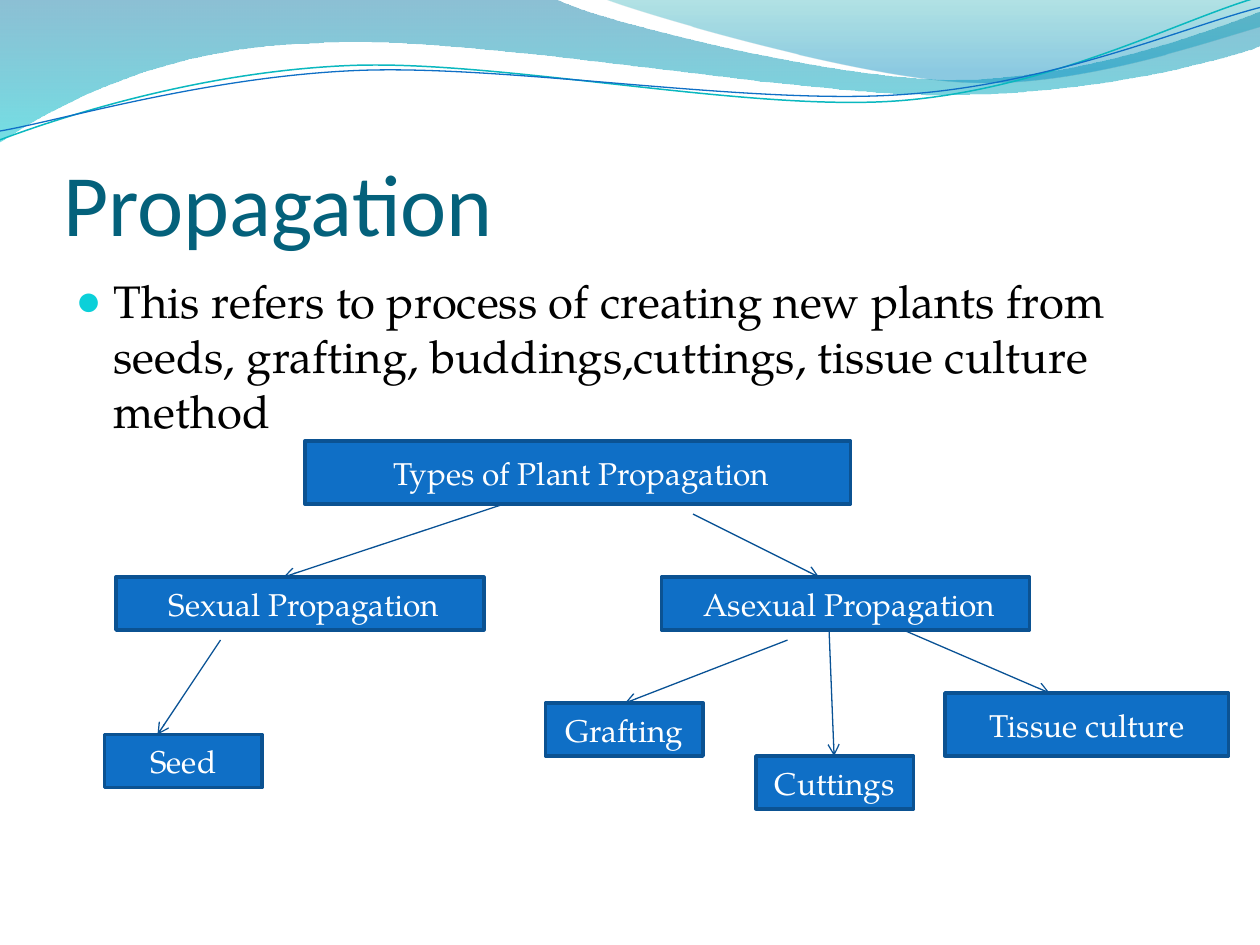
from math import cos, radians, sin

from lxml import etree
from pptx import Presentation
from pptx.dml.color import RGBColor
from pptx.enum.shapes import MSO_CONNECTOR, MSO_SHAPE
from pptx.enum.text import MSO_ANCHOR, MSO_AUTO_SIZE, PP_ALIGN
from pptx.oxml.ns import qn
from pptx.util import Inches, Pt

RECTANGLE = MSO_SHAPE.RECTANGLE
STRAIGHT = MSO_CONNECTOR.STRAIGHT
NO_AUTOFIT = MSO_AUTO_SIZE.NONE
LEFT, CENTER = PP_ALIGN.LEFT, PP_ALIGN.CENTER
TOP, MIDDLE, BOTTOM = MSO_ANCHOR.TOP, MSO_ANCHOR.MIDDLE, MSO_ANCHOR.BOTTOM
TITLE_FONT, BODY_FONT = "Calibri", "TeX Gyre Pagella"
TILT = 2.7
COLORS = {
    "title": "04617B", "text": "000000", "bullet": "0BD0D9",
    "box": "0F6FC6", "box_line": "0B5292", "box_text": "FFFFFF", "arrow": "095295",
    "wave_top": "0074A1", "wave_bottom": "00C6CF",
    "crest_top": "00A1A9", "crest_bottom": "008BBF",
    "teal_line": "0AB8BF", "blue_line": "0F6FC6",
}

WAVE = [(0, 0), (4.4, -0.01), (4.76, 0.17, 6.64, 0.63, 7.58, 0.63),
        (8.53, 0.63, 9.58, 0.26, 10, 0.09), (10.01, 0.36),
        (9.83, 0.44, 8.7, 0.76, 7.46, 0.75), (6.22, 0.75, 3.82, 0.28, 2.57, 0.34),
        (1.29, 0.36, 0.46, 0.83, -0.01, 1.13), (0, 0)]
CREST = [(4.79, -0.01), (5.09, 0.11, 6.82, 0.62, 7.69, 0.65),
         (8.56, 0.69, 9.61, 0.32, 10, 0.21), (10, 0), (4.79, -0.01)]
TEAL_CURVE = [(0, 1.11), (0.48, 0.93, 1.58, 0.57, 2.77, 0.52),
              (3.95, 0.47, 5.93, 0.89, 7.13, 0.8), (8.33, 0.71, 9.38, 0.15, 9.98, -0.02)]
BLUE_CURVE = [(0, 1.04), (0.47, 0.96, 1.64, 0.61, 2.83, 0.56),
              (4.03, 0.51, 5.97, 0.84, 7.17, 0.75), (8.36, 0.67, 9.41, 0.21, 10, 0.06)]
BOXES = [
    (" Types of Plant Propagation", 2.42, 3.5, 4.33, 0.5),
    (" Sexual Propagation", 0.92, 4.58, 2.92, 0.42),
    (" Asexual Propagation", 5.25, 4.58, 2.92, 0.42),
    ("Seed", 0.83, 5.83, 1.25, 0.42),
    ("Grafting", 4.33, 5.58, 1.25, 0.42),
    ("Cuttings", 6, 6, 1.25, 0.42),
    ("Tissue culture", 7.5, 5.5, 2.25, 0.5),
]
ARROWS = [
    (4, 4, 2.25, 4.58), (5.5, 4.08, 6.5, 4.58), (1.75, 5.08, 1.25, 5.83),
    (6.25, 5.08, 4.96, 5.58), (6.58, 5, 6.62, 6), (7.17, 5, 8.33, 5.5),
]


def color(name):
    return RGBColor.from_string(COLORS[name])


def turn(segment, center, degrees):
    angle = radians(degrees)
    turned = []
    for x, y in zip(segment[::2], segment[1::2]):
        x, y = x - center[0], y - center[1]
        turned += [center[0] + x * cos(angle) - y * sin(angle),
                   center[1] + x * sin(angle) + y * cos(angle)]
    return turned


class SlideBuilder:
    def __init__(self, slide):
        self.slide = slide
        self.master = slide.slide_layout.slide_master
        self.foreground = self.master.placeholders[0]._element

    def style_text(self, paragraph, font, size, color_name, alignment):
        paragraph.alignment = alignment
        paragraph.font.name = font
        paragraph.font.size = Pt(size)
        paragraph.font.color.rgb = color(color_name)

    def place(self, shape, left, top, width, height, anchor):
        shape.left, shape.top = Inches(left), Inches(top)
        shape.width, shape.height = Inches(width), Inches(height)
        shape.text_frame.vertical_anchor = anchor

    def title(self, text):
        shape = self.slide.shapes.title
        self.place(shape, 0.5, 0.77, 9, 1.25, BOTTOM)
        frame = shape.text_frame
        frame.margin_left = frame.margin_right = frame.margin_bottom = 0
        frame.text = text
        self.style_text(frame.paragraphs[0], TITLE_FONT, 50, "title", LEFT)

    def bullet(self, text):
        shape = self.slide.placeholders[1]
        self.place(shape, 0.5, 2.12, 9, 4.8, TOP)
        shape.text_frame.auto_size = NO_AUTOFIT
        shape.text_frame.text = text
        paragraph = shape.text_frame.paragraphs[0]
        paragraph.space_before = Pt(5)
        properties = paragraph._p.get_or_add_pPr()
        properties.set("marL", str(Inches(0.3)))
        properties.set("indent", str(Inches(-0.3)))
        bullet_color = etree.SubElement(properties, qn("a:buClr"))
        etree.SubElement(bullet_color, qn("a:srgbClr"), val=COLORS["bullet"])
        etree.SubElement(properties, qn("a:buSzPct"), val="95000")
        etree.SubElement(properties, qn("a:buChar"), char="●")
        self.style_text(paragraph, BODY_FONT, 26, "text", LEFT)

    def backdrop(self, segments, close):
        points = [(Inches(x), Inches(y)) for segment in segments
                  for x, y in zip(segment[::2], segment[1::2])]
        builder = self.slide.shapes.build_freeform(*points[0])
        builder.add_line_segments(points[1:], close=close)
        shape = builder.convert_to_shape()
        shape.shadow.inherit = False
        lines = iter(list(shape._element.iter(qn("a:lnTo"))))
        for segment in segments[1:]:
            line = next(lines)
            if len(segment) == 6:
                line.tag = qn("a:cubicBezTo")
                line.extend([next(lines)[0], next(lines)[0]])
        for line in list(shape._element.iter(qn("a:lnTo"))):
            if len(line) == 0:
                line.getparent().remove(line)
        shape._element.nvSpPr.cNvPr.set("id", str(100 + len(self.master.shapes)))
        self.foreground.addprevious(shape._element)
        return shape

    def gradient_wave(self, segments, stops):
        shape = self.backdrop(segments, True)
        shape.line.fill.background()
        shape.fill.gradient()
        shape.fill.gradient_angle = 270
        for stop, (position, name, opacity) in zip(shape.fill.gradient_stops, stops):
            stop.position = position
            stop.color.rgb = color(name)
        for element, (_, _, opacity) in zip(shape._element.iter(qn("a:srgbClr")), stops):
            etree.SubElement(element, qn("a:alpha"), val=str(opacity * 1000))

    def curve(self, segments, center, color_name, width):
        shape = self.backdrop([turn(segment, center, TILT) for segment in segments], False)
        shape.rotation = -TILT
        shape.fill.background()
        shape.line.color.rgb = color(color_name)
        shape.line.width = Pt(width)

    def box(self, text, left, top, width, height):
        shape = self.slide.shapes.add_shape(RECTANGLE, 0, 0, 0, 0)
        self.place(shape, left, top, width, height, MIDDLE)
        shape.shadow.inherit = False
        shape.fill.solid()
        shape.fill.fore_color.rgb = color("box")
        shape.line.color.rgb = color("box_line")
        shape.line.width = Pt(2)
        shape.text_frame.text = text
        self.style_text(shape.text_frame.paragraphs[0], BODY_FONT, 18, "box_text", CENTER)

    def arrow(self, *ends):
        connector = self.slide.shapes.add_connector(STRAIGHT, *map(Inches, ends))
        connector.line.color.rgb = color("arrow")
        connector.line.width = Pt(0.75)
        etree.SubElement(connector.line._get_or_add_ln(), qn("a:tailEnd"), type="arrow")
        etree.SubElement(connector._element.spPr, qn("a:effectLst"))


def main():
    presentation = Presentation()
    presentation.slide_width, presentation.slide_height = Inches(10), Inches(7.5)
    builder = SlideBuilder(presentation.slides.add_slide(presentation.slide_layouts[1]))
    builder.gradient_wave(WAVE, [(0, "wave_top", 45), (1, "wave_bottom", 55)])
    builder.gradient_wave(CREST, [(0, "crest_top", 30), (0.8, "crest_bottom", 45)])
    builder.curve(TEAL_CURVE, (4.99, 0.57), "teal_line", 0.85)
    builder.curve(BLUE_CURVE, (5, 0.59), "blue_line", 0.75)
    builder.title("Propagation")
    builder.bullet("This refers to process of creating new plants from seeds, grafting, "
                   "buddings,cuttings, tissue culture method")
    for box in BOXES:
        builder.box(*box)
    for arrow in ARROWS:
        builder.arrow(*arrow)
    presentation.save("out.pptx")


if __name__ == "__main__":
    main()
